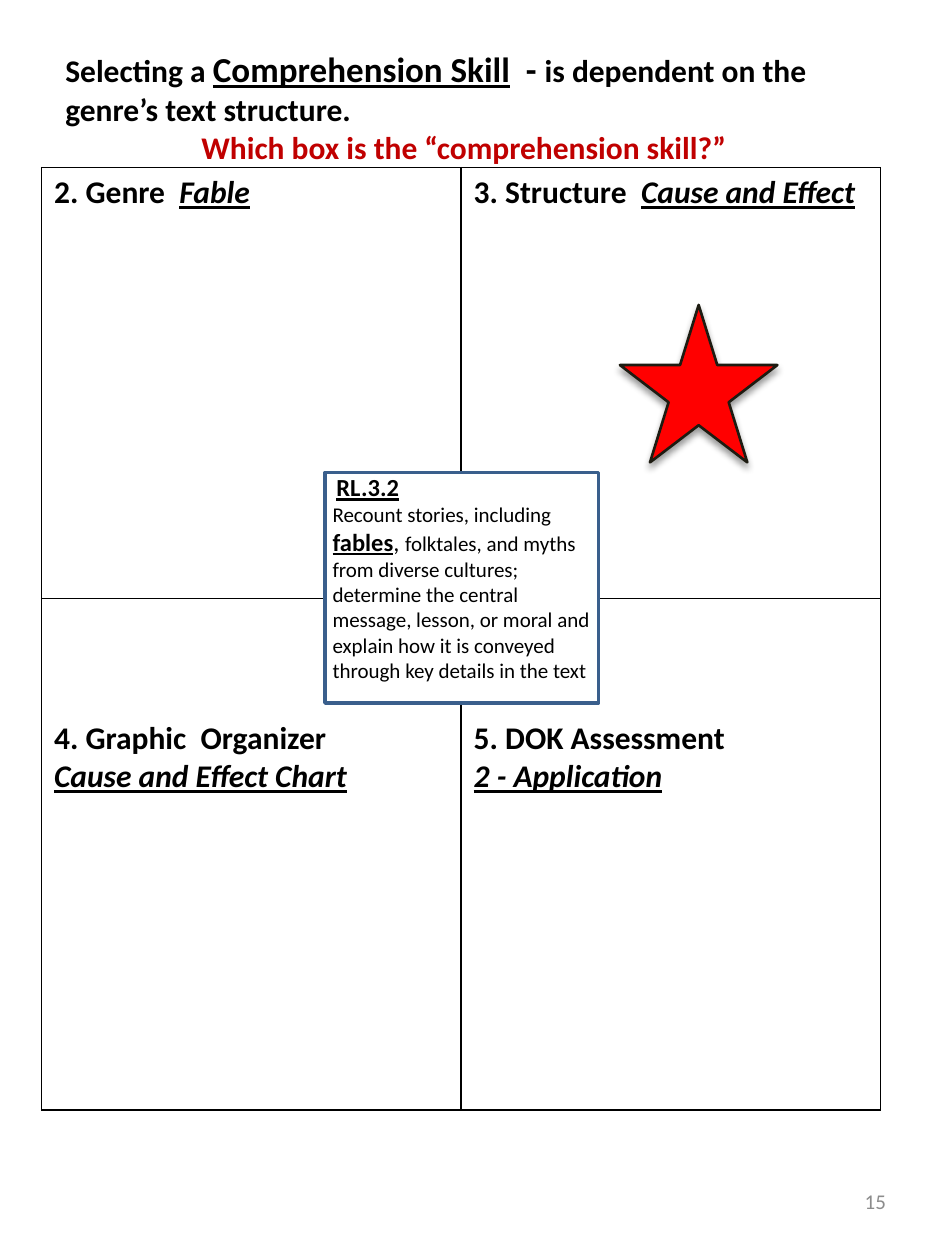
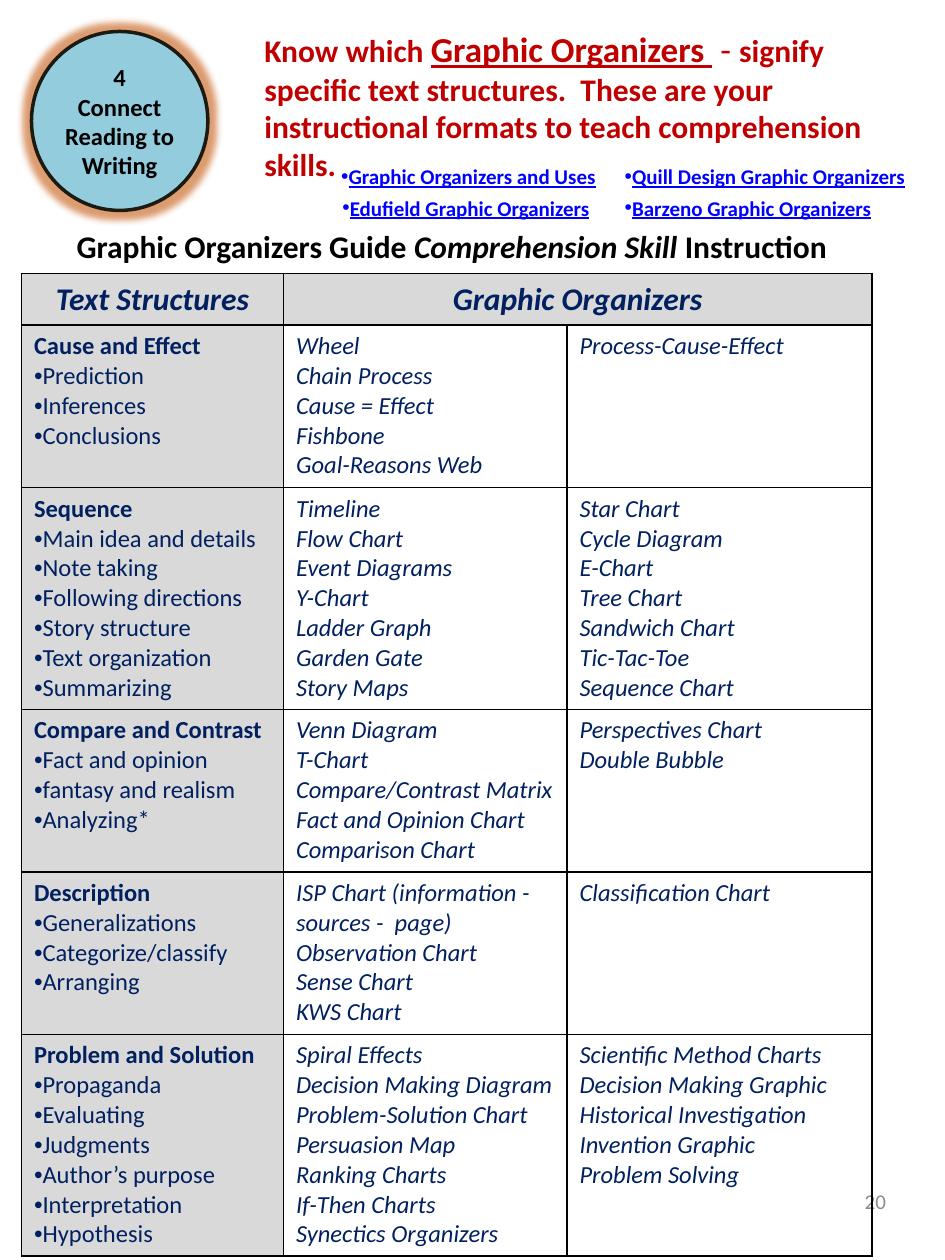
from lxml import etree
from pptx import Presentation
from pptx.dml.color import RGBColor
from pptx.enum import shapes, text
from pptx.oxml import ns
from pptx.util import Inches, Pt

COLORS = {
    "black": "000000", "white": "FFFFFF", "red": "C00000", "star": "FF0000",
    "navy": "002060", "gray": "D9D9D9", "number": "8C8C8C", "link": "0000FF",
    "ink": "1D1B11", "frame": "3A5F8C", "sky": "93CDDD", "glow": "C55A11",
}
FONT = "Calibri"

# A span is (text, size, flags); flags are any of b(old), i(talic), u(nderline).
SKILL_TITLE = [
    ("Selecting a ", 18, "b"), ("Comprehension Skill", 20, "bu"), ("  - ", 20, "b"),
    ("is dependent on the genre’s text structure.", 18, "b"),
]
SKILL_QUESTION = [("Which box is the “comprehension skill?”", 18, "b")]
QUADRANTS = [
    [[[("2. Genre  ", 18, "b"), ("Fable", 18, "biu")]],
     [[("3. Structure  ", 18, "b"), ("Cause and Effect", 18, "biu")]]],
    [[[("4. Graphic  Organizer", 18, "b")], [("Cause and Effect Chart", 18, "biu")]],
     [[("5. DOK Assessment", 18, "b")], [("2 - Application", 18, "biu")]]],
]
STANDARD = [
    [("RL.3.2", 14, "bu")],
    [("Recount stories, including ", 12, ""), ("fables", 14, "bu"), (", ", 14, ""),
     ("folktales, and myths from diverse cultures; determine the central message, "
      "lesson, or moral and explain how it is conveyed through key details in the text",
      12, "")],
]

STEP = ["4", "Connect Reading to Writing"]
ORGANIZER_TITLE = [
    ("Know which ", 18, "b"), ("Graphic Organizers ", 20, "bu"), (" - ", 20, ""),
    ("signify specific text structures.  These are your instructional formats "
     "to teach comprehension skills.", 18, "b"),
]
GUIDE_TITLE = [
    ("Graphic Organizers Guide ", 18, "b"), ("Comprehension Skill ", 18, "bi"),
    ("Instruction", 18, "b"),
]
RESOURCES = [  # left, top, width, label
    (2.61, 1.25, 2.25, "Graphic Organizers and Uses"),
    (2.62, 1.5, 2.24, "Edufield Graphic Organizers"),
    (4.86, 1.25, 2.58, "Quill Design Graphic Organizers"),
    (4.86, 1.5, 2.42, "Barzeno Graphic Organizers"),
]
HEADINGS = ["Text Structures", "Graphic Organizers"]
STRUCTURES = [  # row height, structure, its skills, two columns of organizers
    (1.29, "Cause and Effect", ["Prediction", "Inferences", "Conclusions"],
     ["Wheel", "Chain Process", "Cause = Effect", "Fishbone", "Goal-Reasons Web"],
     ["Process-Cause-Effect"]),
    (1.76, "Sequence",
     ["Main idea and details", "Note taking", "Following directions",
      "Story structure", "Text organization", "Summarizing"],
     ["Timeline", "Flow Chart", "Event Diagrams", "Y-Chart", "Ladder Graph",
      "Garden Gate", "Story Maps"],
     ["Star Chart", "Cycle Diagram", "E-Chart", "Tree Chart", "Sandwich Chart",
      "Tic-Tac-Toe", "Sequence Chart"]),
    (1.29, "Compare and Contrast",
     ["Fact and opinion", "fantasy and realism", "Analyzing*"],
     ["Venn Diagram", "T-Chart", "Compare/Contrast Matrix",
      "Fact and Opinion Chart", "Comparison Chart"],
     ["Perspectives Chart", "Double Bubble"]),
    (1.29, "Description", ["Generalizations", "Categorize/classify", "Arranging"],
     ["ISP Chart (information -  sources -  page)", "Observation Chart",
      "Sense Chart", "KWS Chart"],
     ["Classification Chart"]),
    (1.76, "Problem and Solution",
     ["Propaganda", "Evaluating", "Judgments", "Author’s purpose",
      "Interpretation", "Hypothesis"],
     ["Spiral Effects", "Decision Making Diagram", "Problem-Solution Chart",
      "Persuasion Map", "Ranking Charts", "If-Then Charts", "Synectics Organizers"],
     ["Scientific Method Charts", "Decision Making Graphic",
      "Historical Investigation", "Invention Graphic", "Problem Solving"]),
]


def rgb(name):
    return RGBColor.from_string(COLORS[name])


def add_xml(parent, tag, **attributes):
    return etree.SubElement(parent, ns.qn(tag), attributes)


def add_color(parent, name, opacity=100):
    color = add_xml(parent, "a:srgbClr", val=COLORS[name])
    if opacity < 100:
        add_xml(color, "a:alpha", val=str(opacity * 1000))


def write(frame, paras, color="black", align=None, bullets=False):
    """Fill a text frame; bullets is True for all, or the index of the first bullet."""
    first_bullet = 0 if bullets is True else bullets
    for index, spans in enumerate(paras):
        para = frame.add_paragraph() if index else frame.paragraphs[0]
        para.alignment = align
        if bullets and index >= first_bullet:
            props = para._p.get_or_add_pPr()
            props.set("marL", "0")
            props.set("indent", "0")
            add_xml(props, "a:buFont", typeface="Arial")
            add_xml(props, "a:buChar", char="•")
        for words, size, flags in spans:
            span = para.add_run()
            span.text = words
            font = span.font
            font.name, font.size = FONT, Pt(size)
            font.bold, font.italic, font.underline = (flag in flags for flag in "biu")
            font.color.rgb = rgb(color)


def add_text(page, place, paras, anchor=text.MSO_ANCHOR.TOP, **style):
    box = page.shapes.add_textbox(*map(Inches, place))
    box.text_frame.word_wrap = True
    box.text_frame.vertical_anchor = anchor
    write(box.text_frame, paras, **style)


def add_figure(page, kind, place, fill, line, width):
    figure = page.shapes.add_shape(kind, *map(Inches, place))
    figure.shadow.inherit = False
    figure.fill.solid()
    figure.fill.fore_color.rgb = rgb(fill)
    figure.line.color.rgb = rgb(line)
    figure.line.width = Pt(width)
    frame = figure.text_frame
    frame.word_wrap = True
    frame.margin_left = frame.margin_right = frame.margin_top = frame.margin_bottom = 0
    return figure


def add_effect(figure, tag, color, opacity, **attributes):
    effects = figure._element.spPr.find(ns.qn("a:effectLst"))
    add_color(add_xml(effects, tag, **attributes), color, opacity)


def add_grid(page, left, top, widths, heights):
    grid = page.shapes.add_table(
        len(heights), len(widths),
        *map(Inches, (left, top, sum(widths), sum(heights)))).table
    grid.first_row = grid.horz_banding = False
    for column, width in zip(grid.columns, widths):
        column.width = Inches(width)
    for row, height in zip(grid.rows, heights):
        row.height = Inches(height)
    for cell in grid.iter_cells():
        props = cell._tc.get_or_add_tcPr()
        for side in "LRTB":
            border = add_xml(props, "a:ln" + side, w=str(Pt(1)))
            add_color(add_xml(border, "a:solidFill"), "black")
        cell.fill.background()
    return grid


def shade(cell):
    cell.fill.solid()
    cell.fill.fore_color.rgb = rgb("gray")


def add_page(deck, number):
    page = deck.slides.add_slide(deck.slide_layouts[6])
    add_text(page, (5.38, 9.27, 1.75, 0.53), [[(str(number), 12, "")]],
             anchor=text.MSO_ANCHOR.MIDDLE, color="number", align=text.PP_ALIGN.RIGHT)
    return page


def build_skill_page(deck):
    page = add_page(deck, 15)
    grid = add_grid(page, 0.33, 1.33, [3.33, 3.33], [3.42, 4.06])
    for r, row in enumerate(QUADRANTS):
        for c, paras in enumerate(row):
            cell = grid.cell(r, c)
            if r:
                cell.margin_top = Inches(0.96)  # clears the standard in the middle
            write(cell.text_frame, paras)
    add_text(page, (0.42, 0.33, 6.42, 0.74), [SKILL_TITLE])

    star = add_figure(page, shapes.MSO_SHAPE.STAR_5_POINT, (4.92, 2.42, 1.25, 1.25),
                      "star", "ink", 1.5)
    add_effect(star, "a:outerShdw", "black", 40, blurRad=str(Pt(4)), dist=str(Pt(3)),
               dir="5400000", rotWithShape="0")
    add_text(page, (1.5, 0.97, 4.38, 0.4), [SKILL_QUESTION], color="red")

    standard = add_figure(page, shapes.MSO_SHAPE.RECTANGLE, (2.58, 3.75, 2.17, 1.83),
                          "white", "frame", 2)
    standard.text_frame.vertical_anchor = text.MSO_ANCHOR.TOP
    write(standard.text_frame, STANDARD, align=text.PP_ALIGN.LEFT)
    for para, indent in zip(standard.text_frame.paragraphs, (0.09, 0.06)):
        para._p.get_or_add_pPr().set("marL", str(Inches(indent)))


def build_organizer_page(deck):
    page = add_page(deck, 20)
    grid = add_grid(page, 0.17, 2.17, [2.08, 2.25, 2.42],
                    [0.41] + [row[0] for row in STRUCTURES])
    grid.cell(0, 1).merge(grid.cell(0, 2))
    for c, heading in enumerate(HEADINGS):
        cell = grid.cell(0, c)
        shade(cell)
        cell.vertical_anchor = text.MSO_ANCHOR.MIDDLE
        write(cell.text_frame, [[(heading, 18, "bi")]], "navy", text.PP_ALIGN.CENTER)
    for r, (_, structure, skills, *organizers) in enumerate(STRUCTURES, 1):
        cell = grid.cell(r, 0)
        shade(cell)
        paras = [[(structure, 14, "b")]] + [[(skill, 14, "")] for skill in skills]
        write(cell.text_frame, paras, "navy", bullets=1)
        for c, names in enumerate(organizers, 1):
            write(grid.cell(r, c).text_frame, [[(name, 14, "i")] for name in names], "navy")

    badge = add_figure(page, shapes.MSO_SHAPE.OVAL, (0.25, 0.25, 1.4, 1.42),
                       "sky", "ink", 2)
    add_effect(badge, "a:glow", "glow", 60, rad=str(Pt(8)))
    badge.text_frame.vertical_anchor = text.MSO_ANCHOR.MIDDLE
    write(badge.text_frame, [[(line, 14, "b")] for line in STEP],
          align=text.PP_ALIGN.CENTER)

    add_text(page, (2, 0.17, 5.17, 1.35), [ORGANIZER_TITLE], color="red")
    add_text(page, (0.17, 1.75, 6.83, 0.4), [GUIDE_TITLE], align=text.PP_ALIGN.CENTER)
    for left, top, width, label in RESOURCES:
        add_text(page, (left, top, width, 0.5), [[(label, 12, "bu")]],
                 color="link", bullets=True)


def main():
    deck = Presentation()
    deck.slide_width, deck.slide_height = Inches(7.5), Inches(10)
    build_skill_page(deck)
    build_organizer_page(deck)
    deck.save("out.pptx")


if __name__ == "__main__":
    main()
